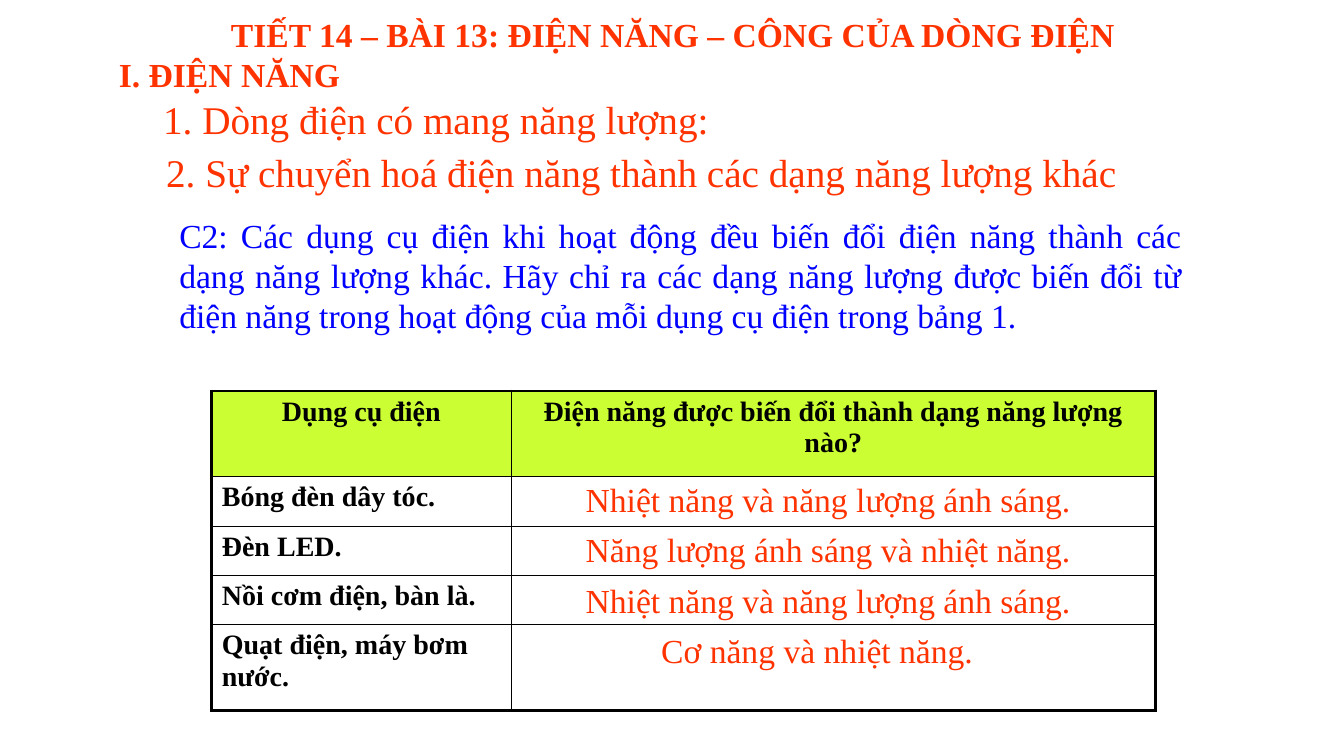
from lxml import etree
from pptx import Presentation
from pptx.dml.color import RGBColor
from pptx.enum import text
from pptx.oxml import ns
from pptx.util import Inches, Pt

FONT = "Times New Roman"
RED = RGBColor(0xFF, 0x33, 0x00)
BLUE = RGBColor(0x00, 0x00, 0xFF)
BLACK = RGBColor(0x00, 0x00, 0x00)
LIME = RGBColor(0xCC, 0xFF, 0x33)

# Content: text, (left, top, width, height), format
TITLE = "TIẾT 14 – BÀI 13: ĐIỆN NĂNG – CÔNG CỦA DÒNG ĐIỆN"
TITLE_PLACE = (2.19, 0.09, 10.13, 0.5)
TEXTS = [
    ("I. ĐIỆN NĂNG", (1.08, 0.49, 7.33, 0.5), dict(bold=True)),
    ("1. Dòng điện có mang năng lượng:", (1.52, 0.9, 7.33, 0.57), dict(size=28)),
    ("2. Sự chuyển hoá điện năng thành các dạng năng lượng khác",
     (1.55, 1.42, 9.7, 0.57), dict(size=28)),
    ("C2: Các dụng cụ điện khi hoạt động đều biến đổi điện năng thành các "
     "dạng năng lượng khác. Hãy chỉ ra các dạng năng lượng được biến đổi từ "
     "điện năng trong hoạt động của mỗi dụng cụ điện trong bảng 1.",
     (1.68, 2.08, 10.14, 1.31),
     dict(color=BLUE, align=text.PP_ALIGN.JUSTIFY)),
]
HEADERS = ["Dụng cụ điện", "Điện năng được biến đổi thành dạng năng lượng nào?"]
DEVICES = ["Bóng đèn dây tóc.", "Đèn LED.", "Nồi cơm điện, bàn là.",
           "Quạt điện, máy bơm nước."]
# Answer text and its left edge
ANSWERS = [
    ("Nhiệt năng và năng lượng ánh sáng.", 5.71),
    ("Năng lượng ánh sáng và nhiệt năng.", 5.71),
    ("Nhiệt năng và năng lượng ánh sáng.", 5.71),
    ("Cơ năng và nhiệt năng.", 6.46),
]
TABLE_LEFT, TABLE_TOP = 2.1, 3.88
COLUMN_WIDTHS = [2.97, 6.39]
ROW_HEIGHTS = [0.85, 0.49, 0.49, 0.49, 0.85]
ANSWER_TOP, ANSWER_STEP = 4.7, 0.5
THICK, THIN = 2.25, 1


def write_text(frame, words, size=24, color=RED, bold=False,
               align=text.PP_ALIGN.LEFT):
    frame.word_wrap = True
    frame.vertical_anchor = text.MSO_ANCHOR.TOP
    paragraph = frame.paragraphs[0]
    paragraph.alignment = align
    run = paragraph.add_run()
    run.text = words
    run.font.name = FONT
    run.font.size = Pt(size)
    run.font.bold = bold
    run.font.color.rgb = color


def add_text(slide, words, place, **text_format):
    box = slide.shapes.add_textbox(*[Inches(value) for value in place])
    write_text(box.text_frame, words, **text_format)


def set_borders(cell, widths):
    properties = cell._tc.get_or_add_tcPr()
    for index, (side, width) in enumerate(widths.items()):
        line = etree.Element(ns.qn("a:ln" + side), w=str(Pt(width)))
        fill = etree.SubElement(line, ns.qn("a:solidFill"))
        etree.SubElement(fill, ns.qn("a:srgbClr"), val=str(BLACK))
        properties.insert(index, line)


def add_device_table(slide):
    rows, columns = len(ROW_HEIGHTS), len(COLUMN_WIDTHS)
    table = slide.shapes.add_table(
        rows, columns, Inches(TABLE_LEFT), Inches(TABLE_TOP),
        Inches(sum(COLUMN_WIDTHS)), Inches(sum(ROW_HEIGHTS))).table
    table.horz_banding = False
    for column, width in zip(table.columns, COLUMN_WIDTHS):
        column.width = Inches(width)
    for row, height in zip(table.rows, ROW_HEIGHTS):
        row.height = Inches(height)

    # Header row and device column
    for index, words in enumerate(HEADERS):
        write_text(table.cell(0, index).text_frame, words, size=20,
                   color=BLACK, bold=True, align=text.PP_ALIGN.CENTER)
    for index, words in enumerate(DEVICES, start=1):
        write_text(table.cell(index, 0).text_frame, words, size=20,
                   color=BLACK, bold=True)

    # Fills, with a thick frame around thin inner lines
    for row in range(rows):
        for column in range(columns):
            cell = table.cell(row, column)
            if row == 0:
                cell.fill.solid()
                cell.fill.fore_color.rgb = LIME
            else:
                cell.fill.background()
            set_borders(cell, {
                "L": THICK if column == 0 else THIN,
                "R": THICK if column == columns - 1 else THIN,
                "T": THICK if row == 0 else THIN,
                "B": THICK if row == rows - 1 else THIN,
            })


def main():
    presentation = Presentation()
    presentation.slide_width = Inches(13.33)
    presentation.slide_height = Inches(7.5)
    slide = presentation.slides.add_slide(presentation.slide_layouts[5])

    # Title
    title = slide.shapes.title
    title.left, title.top, title.width, title.height = map(Inches, TITLE_PLACE)
    write_text(title.text_frame, TITLE, bold=True)
    title.text_frame.auto_size = text.MSO_AUTO_SIZE.NONE

    # Headings and question
    for words, place, text_format in TEXTS:
        add_text(slide, words, place, **text_format)

    # Table with the answers laid over its second column
    add_device_table(slide)
    for index, (words, left) in enumerate(ANSWERS):
        add_text(slide, words,
                 (left, ANSWER_TOP + index * ANSWER_STEP, 5.29, 0.5))

    presentation.save("out.pptx")


if __name__ == "__main__":
    main()
